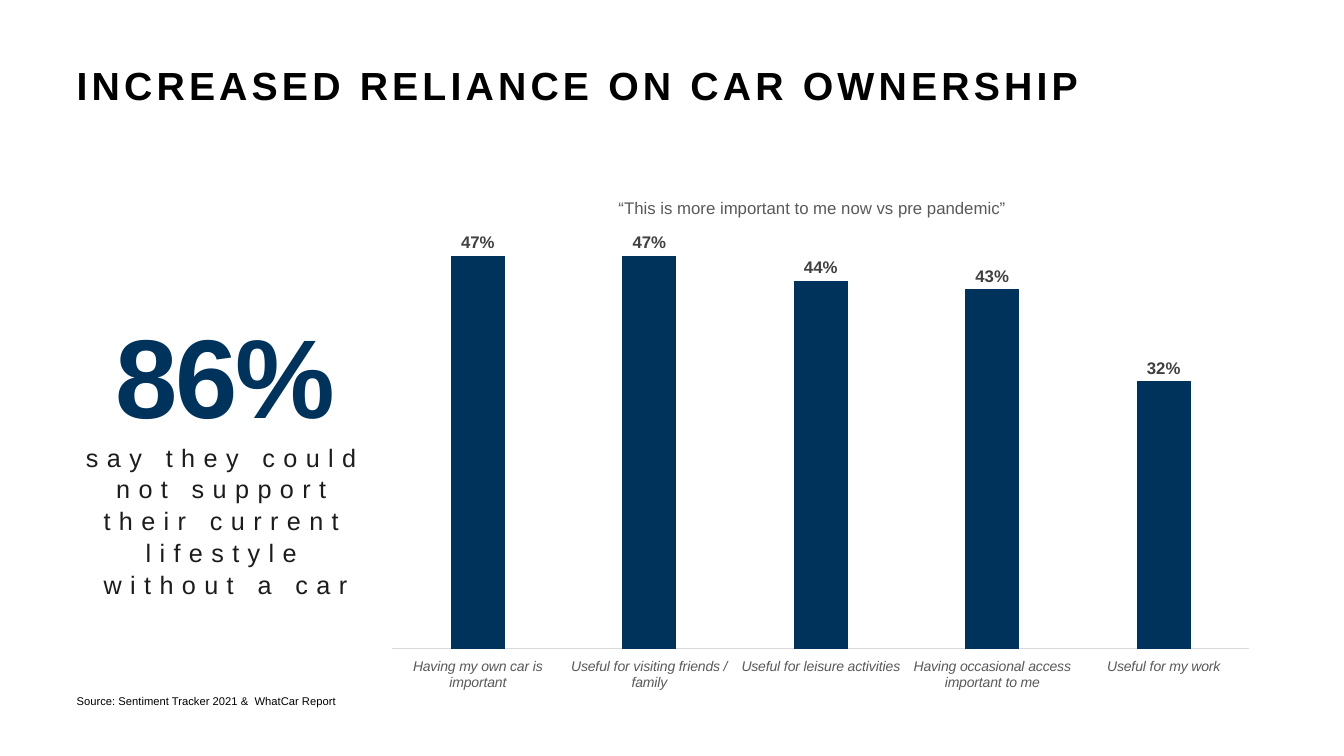
from lxml import etree
from pptx import Presentation
from pptx.chart.data import CategoryChartData
from pptx.dml.color import RGBColor
from pptx.enum.chart import XL_CHART_TYPE, XL_LABEL_POSITION, XL_TICK_LABEL_POSITION, XL_TICK_MARK
from pptx.enum.text import MSO_ANCHOR, MSO_AUTO_SIZE, PP_ALIGN
from pptx.oxml.ns import qn
from pptx.util import Inches, Pt

COLUMN = XL_CHART_TYPE.COLUMN_CLUSTERED
OUTSIDE_END = XL_LABEL_POSITION.OUTSIDE_END
LABELS_LOW = XL_TICK_LABEL_POSITION.LOW
NO_TICK = XL_TICK_MARK.NONE
TOP = MSO_ANCHOR.TOP
NO_FIT = MSO_AUTO_SIZE.NONE
LEFT, CENTER = PP_ALIGN.LEFT, PP_ALIGN.CENTER

BLACK = RGBColor(0x00, 0x00, 0x00)
INK = RGBColor(0x1C, 0x1C, 0x1C)
NAVY = RGBColor(0x00, 0x33, 0x5B)
DARK_GREY = RGBColor(0x40, 0x40, 0x40)
GREY = RGBColor(0x59, 0x59, 0x59)
LIGHT_GREY = RGBColor(0xD9, 0xD9, 0xD9)

FONT = "Arial"
WIDTH, HEIGHT = 13.33, 7.5
MARGIN = 0.76
CONTENT_W = WIDTH - 2 * MARGIN
STAT_W = CONTENT_W / 4

REASONS = {
    "Having my own car is important": 0.47,
    "Useful for visiting friends / family": 0.47,
    "Useful for leisure activities": 0.44,
    "Having occasional access important to me": 0.43,
    "Useful for my work": 0.32,
}


def set_font(font, size, color, bold=False, italic=False):
    font.name = FONT
    font.size = Pt(size)
    font.color.rgb = color
    font.bold = bold
    font.italic = italic


def set_frame(tf):
    tf.margin_left = tf.margin_right = tf.margin_top = tf.margin_bottom = 0
    tf.word_wrap = True
    tf.auto_size = NO_FIT
    tf.vertical_anchor = TOP


def write(p, text, size, color, bold=False, align=LEFT, line=1.0, spacing=0):
    p.alignment = align
    p.line_spacing = line
    r = p.add_run()
    r.text = text
    set_font(r.font, size, color, bold)
    r._r.get_or_add_rPr().set("spc", str(int(spacing * 100)))


def set_layout(layout, inner=False, **shares):
    manual = etree.SubElement(layout, qn("c:manualLayout"))
    if inner:
        etree.SubElement(manual, qn("c:layoutTarget")).set("val", "inner")
    for axis in ("x", "y"):
        etree.SubElement(manual, qn(f"c:{axis}Mode")).set("val", "edge")
    for name, share in shares.items():
        etree.SubElement(manual, qn(f"c:{name}")).set("val", str(share))


def add_text_box(slide, box):
    tf = slide.shapes.add_textbox(*map(Inches, box)).text_frame
    set_frame(tf)
    return tf


def add_title(slide, box):
    sp = slide.shapes.title
    sp.left, sp.top, sp.width, sp.height = map(Inches, box)
    set_frame(sp.text_frame)
    write(sp.text_frame.paragraphs[0], "INCREASED RELIANCE ON CAR OWNERSHIP",
          28, BLACK, bold=True, line=0.85, spacing=3)


def add_source(slide, box):
    tf = add_text_box(slide, box)
    write(tf.paragraphs[0], "Source: Sentiment Tracker 2021 &  WhatCar Report",
          8, BLACK, line=0.9)


def add_stat(slide, box):
    tf = add_text_box(slide, box)
    write(tf.paragraphs[0], "86%", 80, NAVY, bold=True, align=CENTER,
          line=1.05, spacing=-1.5)
    write(tf.add_paragraph(),
          "say they could not support their current lifestyle without a car",
          18, INK, align=CENTER, line=1.05, spacing=6)


def add_reasons_chart(slide, box):
    data = CategoryChartData(number_format="0%")
    data.categories = list(REASONS)
    data.add_series("Series 1", list(REASONS.values()))
    chart = slide.shapes.add_chart(COLUMN, *map(Inches, box), data).chart
    set_font(chart.font, 10, BLACK)
    chart.has_legend = False

    chart.has_title = True
    p = chart.chart_title.text_frame.paragraphs[0]
    write(p, "“This is more important to me now vs pre pandemic”", 12, GREY, align=CENTER)
    title_layout = chart.chart_title._element.find(qn("c:layout"))
    set_layout(title_layout, x=0.27, y=0.03)

    plot = chart.plots[0]
    plot.gap_width = 219
    plot.overlap = -27
    plot.vary_by_categories = False
    fill = plot.series[0].format.fill
    fill.solid()
    fill.fore_color.rgb = NAVY
    plot.has_data_labels = True
    labels = plot.data_labels
    labels.show_value = True
    labels.position = OUTSIDE_END
    labels.number_format = "0%"
    labels.number_format_is_linked = False
    set_font(labels.font, 12, DARK_GREY, bold=True)

    axis = chart.category_axis
    axis.major_tick_mark = axis.minor_tick_mark = NO_TICK
    axis.tick_label_position = LABELS_LOW
    axis.format.line.color.rgb = LIGHT_GREY
    axis.format.line.width = Pt(0.75)
    set_font(axis.tick_labels.font, 10, GREY, italic=True)
    values = chart.value_axis
    values.visible = False
    values.has_major_gridlines = False
    values.minimum_scale = 0
    values.maximum_scale = 0.5

    area = chart._chartSpace.chart.plotArea
    layout = area.find(qn("c:layout"))
    if layout is None:
        layout = etree.Element(qn("c:layout"))
        area.insert(0, layout)
    set_layout(layout, inner=True, x=0.02, y=0.1, w=0.96, h=0.81)


def main():
    prs = Presentation()
    prs.slide_width, prs.slide_height = Inches(WIDTH), Inches(HEIGHT)
    slide = prs.slides.add_slide(prs.slide_layouts[5])
    add_title(slide, (MARGIN, 0.68, CONTENT_W, 1.1))
    add_source(slide, (MARGIN, 6.9, CONTENT_W, 0.39))
    add_reasons_chart(slide, (MARGIN + STAT_W, 1.78, CONTENT_W - STAT_W, 5.12))
    add_stat(slide, (MARGIN, 2.97, STAT_W, 2.8))
    prs.save("out.pptx")


if __name__ == "__main__":
    main()
